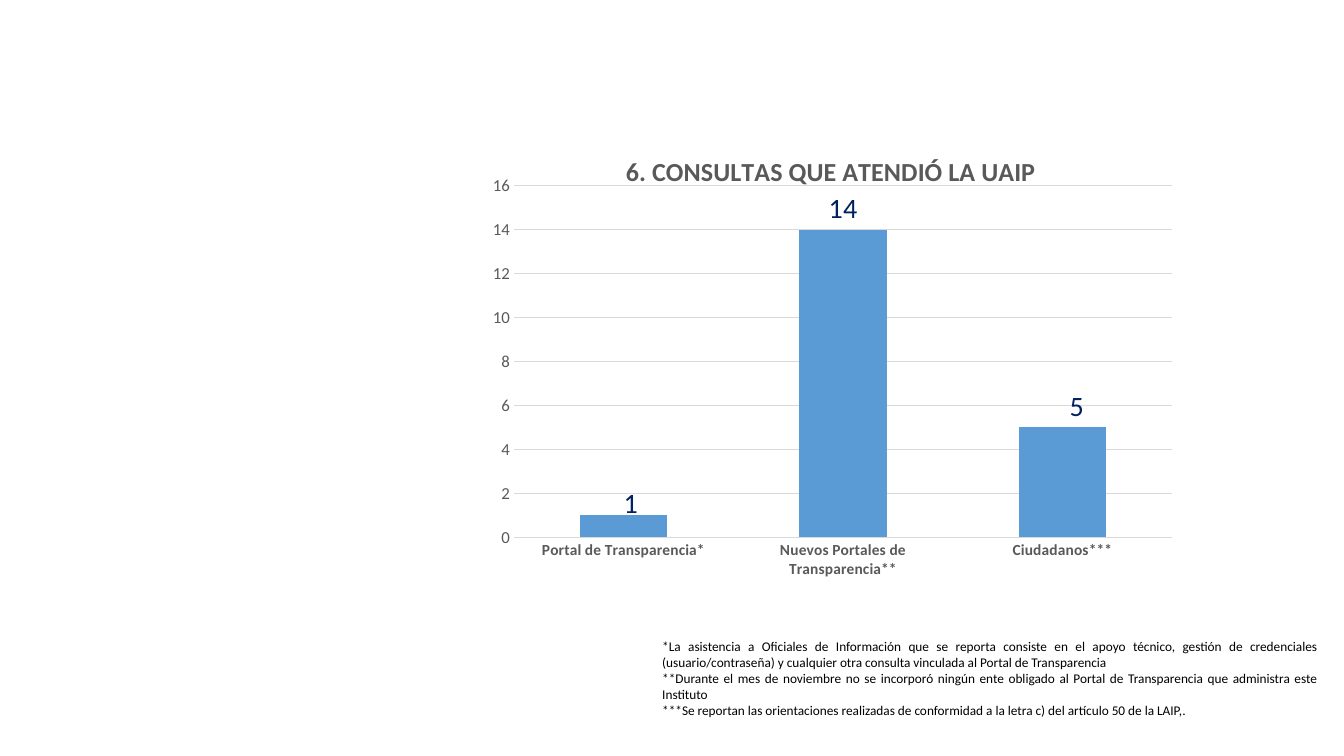
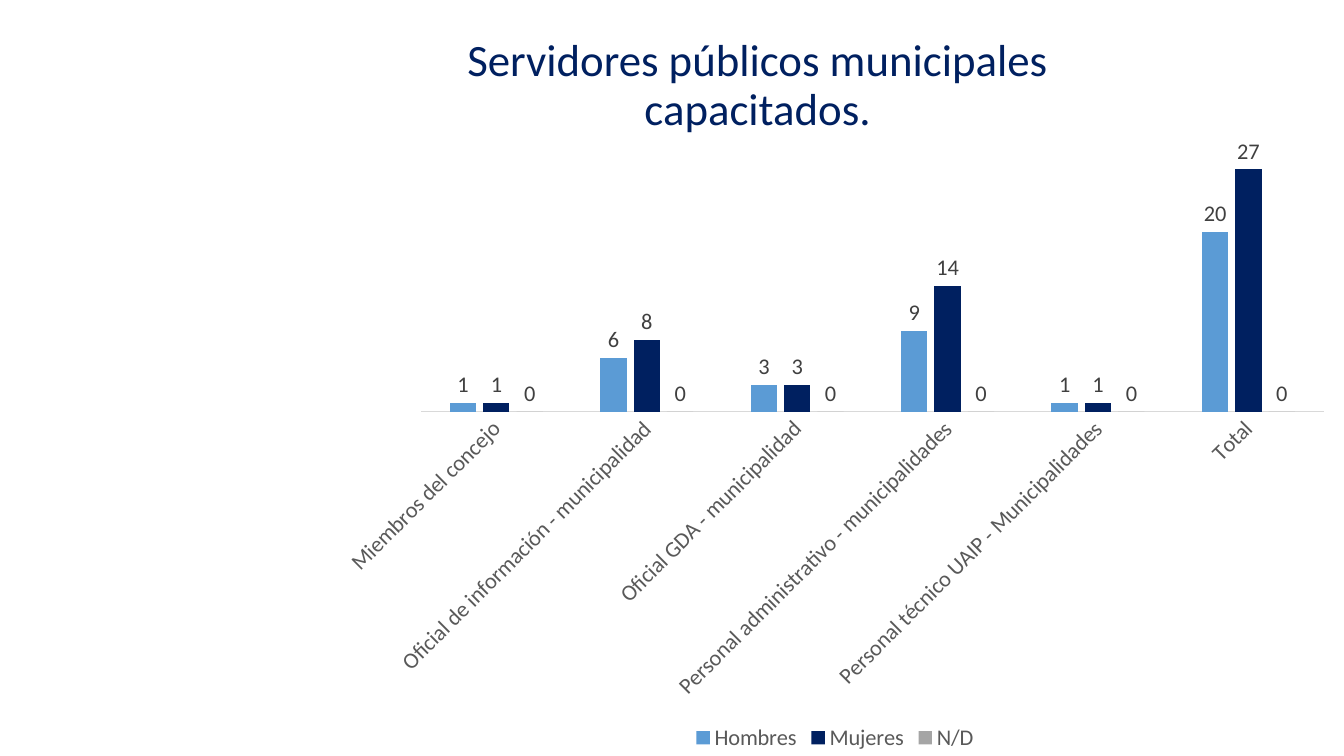
from pptx import Presentation
from pptx.chart.data import CategoryChartData
from pptx.dml.color import RGBColor
from pptx.enum.chart import XL_CHART_TYPE, XL_LABEL_POSITION, XL_LEGEND_POSITION, XL_TICK_MARK
from pptx.enum.text import MSO_ANCHOR, PP_ALIGN
from pptx.oxml import parse_xml
from pptx.oxml.ns import nsdecls
from pptx.util import Inches, Pt

# Shared look
FONT = "Calibri"
HEX = {"blue": "5B9BD5", "navy": "002060", "gray": "A5A5A5", "text": "595959",
       "label": "404040", "grid": "D9D9D9", "black": "000000"}

# Content
QUERIES = {
    "title": "6. CONSULTAS QUE ATENDIÓ LA UAIP",
    "cats": ["Portal de Transparencia*", "Nuevos Portales de Transparencia**",
             "Ciudadanos***"],
    "series": [("Series 1", [1, 14, 5], "blue")],
    "shifts": {0: (0.01, 0.02), 2: (0.02, 0)},
}
NOTES = [
    "*La asistencia a Oficiales de Información que se reporta consiste en el apoyo técnico, "
    "gestión de credenciales (usuario/contraseña) y cualquier otra consulta vinculada al "
    "Portal de Transparencia",
    "**Durante el mes de noviembre no se incorporó ningún ente obligado al Portal de "
    "Transparencia que administra este Instituto",
    "***Se reportan las orientaciones realizadas de conformidad a la letra c) del artículo 50 "
    "de la LAIP,.",
]
STAFF = {
    "title": "Servidores públicos municipales capacitados.",
    "cats": ["Miembros del concejo", "Oficial de información - municipalidad",
             "Oficial GDA - municipalidad", "Personal administrativo - municipalidades",
             "Personal técnico UAIP - Municipalidades", "Total"],
    "series": [("Hombres", [1, 6, 3, 9, 1, 20], "blue"),
               ("Mujeres", [1, 8, 3, 14, 1, 27], "navy"),
               ("N/D", [0] * 6, "gray")],
}


def color(name):
    return RGBColor.from_string(HEX[name])


def style(font, size, name, bold=False):
    font.name, font.size, font.bold = FONT, Pt(size), bold
    font.color.rgb = color(name)


def place(shape, box):
    shape.left, shape.top, shape.width, shape.height = map(Inches, box)


def lay_out(part, index, tags):
    """Give a chart part a manual layout at its place among the children."""
    for old in part.xpath("./c:layout"):
        part.remove(old)
    body = "".join(f'<c:{tag} val="{val}"/>' for tag, val in tags.items())
    part.insert(index, parse_xml(
        f'<c:layout {nsdecls("c")}><c:manualLayout>{body}</c:manualLayout></c:layout>'))


def add_bars(slide, box, info, gap, lap, size, tint):
    """Add a column chart with value labels above its bars."""
    data = CategoryChartData()
    data.categories = info["cats"]
    for name, vals, _ in info["series"]:
        data.add_series(name, vals)
    frame = slide.shapes.add_chart(
        XL_CHART_TYPE.COLUMN_CLUSTERED, *map(Inches, box), data)
    chart = frame.chart
    style(chart.font, size, "black")
    chart.has_title = chart.has_legend = False
    plot = chart.plots[0]
    plot.gap_width, plot.overlap = gap, lap
    plot.vary_by_categories = False
    for bars, (_, _, fill) in zip(plot.series, info["series"]):
        bars.format.fill.solid()
        bars.format.fill.fore_color.rgb = color(fill)
        bars.invert_if_negative = False
        labels = bars.data_labels
        labels.show_value = True
        labels.position = XL_LABEL_POSITION.OUTSIDE_END
        style(labels.font, size, tint)
    for axis in (chart.category_axis, chart.value_axis):
        axis.major_tick_mark = axis.minor_tick_mark = XL_TICK_MARK.NONE
        axis.has_major_gridlines = False
    return chart


def set_line(line):
    line.color.rgb = color("grid")
    line.width = Pt(0.75)


def build_queries(deck):
    slide = deck.slides.add_slide(deck.slide_layouts[6])

    # Footnotes
    box = slide.shapes.add_textbox(*map(Inches, (6.47, 6.28, 6.7, 0.9)))
    frame = box.text_frame
    frame.word_wrap = True
    for i, note in enumerate(NOTES):
        para = frame.add_paragraph() if i else frame.paragraphs[0]
        para.alignment = PP_ALIGN.JUSTIFY
        run = para.add_run()
        run.text = note
        style(run.font, 9.5, "black")

    # Chart and its title
    chart = add_bars(slide, (4.67, 1.24, 7.1, 4.65), QUERIES, 150, 0, 20, "navy")
    chart.has_title = True
    run = chart.chart_title.text_frame.paragraphs[0].add_run()
    run.text = QUERIES["title"]
    style(run.font, 18.6, "text", True)
    chart.chart_title.include_in_layout = False
    lay_out(chart.element.xpath(".//c:chart/c:title")[0], 1,
            {"xMode": "edge", "yMode": "edge", "x": 0.21, "y": 0.05})
    lay_out(chart.element.xpath(".//c:plotArea")[0], 0,
            {"layoutTarget": "inner", "xMode": "edge", "yMode": "edge",
             "x": 0.06, "y": 0.13, "w": 0.92, "h": 0.75})

    # Axes
    cat, val = chart.category_axis, chart.value_axis
    style(cat.tick_labels.font, 11, "text", True)
    style(val.tick_labels.font, 12, "text")
    for axis in (cat, val):
        axis.format.line.fill.background()
    val.minimum_scale, val.maximum_scale, val.major_unit = 0, 16, 2
    val.has_major_gridlines = True
    set_line(val.major_gridlines.format.line)

    # Shifted value labels
    bars = chart.plots[0].series[0]
    for i, (x, y) in QUERIES["shifts"].items():
        label = bars.points[i].data_label
        style(label.font, 20, "navy")
        label.position = XL_LABEL_POSITION.OUTSIDE_END
        part = chart.element.xpath(f".//c:dLbl[c:idx/@val='{i}']")[0]
        lay_out(part, 1, {"x": x, "y": y})


def build_staff(deck):
    slide = deck.slides.add_slide(deck.slide_layouts[5])

    # Title
    title = slide.shapes.title
    place(title, (3.87, 0, 7.29, 1.72))
    frame = title.text_frame
    frame.word_wrap = True
    frame.vertical_anchor = MSO_ANCHOR.MIDDLE
    para = frame.paragraphs[0]
    para.alignment, para.line_spacing = PP_ALIGN.CENTER, 0.9
    run = para.add_run()
    run.text = STAFF["title"]
    style(run.font, 32, "navy")

    # Chart with slanted categories
    chart = add_bars(slide, (3.23, 1.29, 10.1, 6.21), STAFF, 219, -27, 16, "label")
    cat = chart.category_axis
    style(cat.tick_labels.font, 16, "text")
    set_line(cat.format.line)
    chart.element.xpath(".//c:catAx/c:txPr/a:bodyPr")[0].set("rot", "-2700000")
    chart.value_axis.minimum_scale, chart.value_axis.maximum_scale = 0, 30
    chart.value_axis.visible = False

    # Legend
    chart.has_legend = True
    chart.legend.position = XL_LEGEND_POSITION.BOTTOM
    chart.legend.include_in_layout = False
    style(chart.legend.font, 16, "text")


def main():
    deck = Presentation()
    deck.slide_width, deck.slide_height = Inches(13.33), Inches(7.5)
    build_queries(deck)
    build_staff(deck)
    deck.save("out.pptx")


if __name__ == "__main__":
    main()
